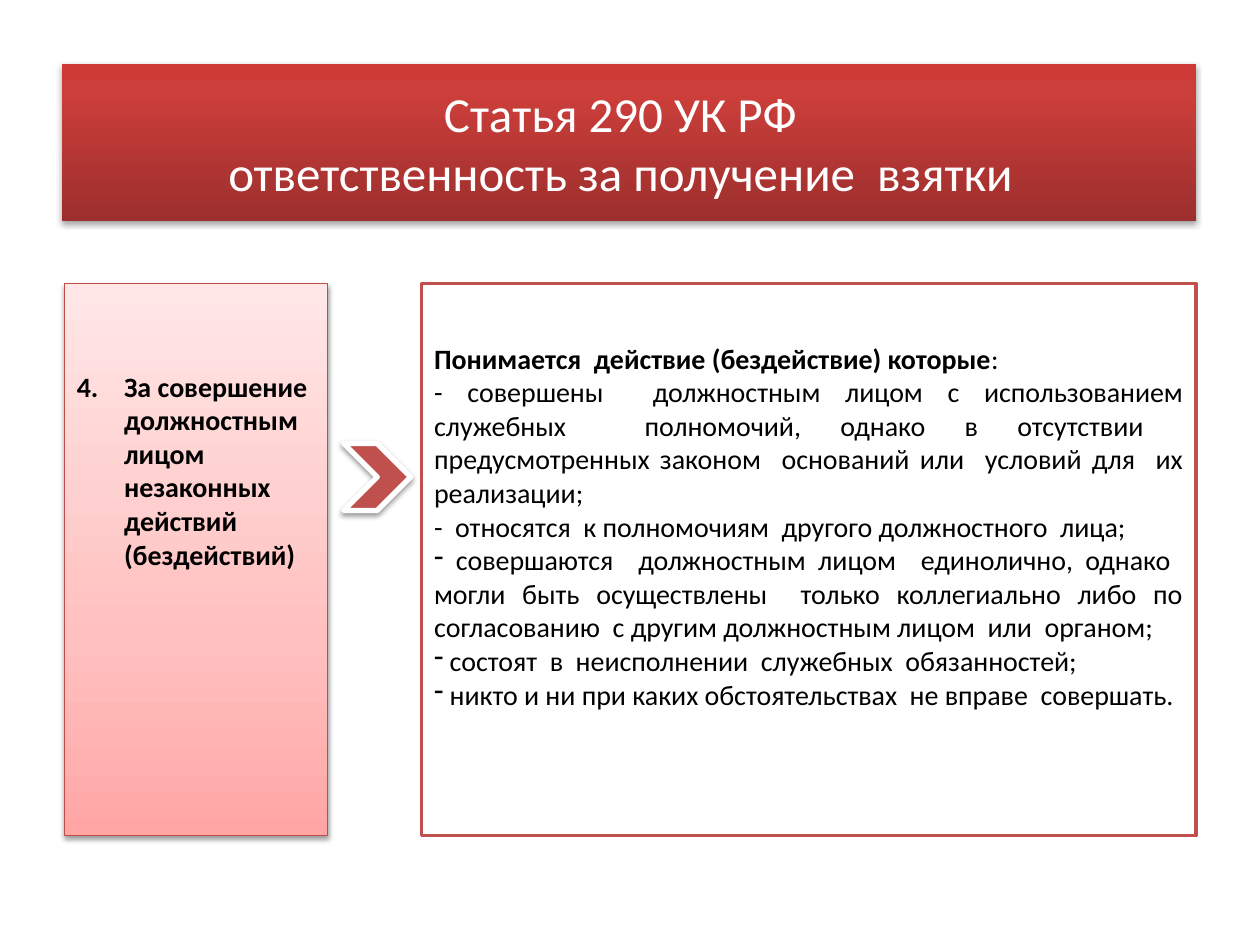
from dataclasses import dataclass
from typing import Optional

from lxml.etree import SubElement
from pptx import Presentation
from pptx.dml.color import RGBColor
from pptx.enum.shapes import MSO_SHAPE as Shape
from pptx.enum.text import MSO_ANCHOR as Anchor, PP_ALIGN as Align
from pptx.oxml.ns import qn
from pptx.util import Pt

FONT = "Calibri"
COLORS = {
    "accent": "C0504D",
    "panel_line": "BF4C48",
    "white": "FFFFFF",
    "black": "000000",
}
HEADER_STOPS = ((0, "9C2F2D"), (80, "CB3E3A"), (100, "CE3B37"))
PANEL_STOPS = ((0, "FFA6A5"), (35, "FFC0BF"), (100, "FFE7E7"))
TOP, HEIGHT = 162, 315.5


@dataclass(frozen=True)
class Block:
    kind: Shape
    left: float
    top: float
    width: float
    height: float
    fill: Optional[str] = None
    stops: tuple = ()
    line: Optional[str] = None
    line_width: float = 0
    shadow_dist: float = 0
    shadow_alpha: int = 38


@dataclass(frozen=True)
class Item:
    text: str
    bullet: bool = False


HEADER = Block(Shape.RECTANGLE, 35.5, 36.5, 648, 90, stops=HEADER_STOPS,
               shadow_dist=1.8, shadow_alpha=35)
CRIME = Block(Shape.RECTANGLE, 36.8, TOP, 150.5, HEIGHT, stops=PANEL_STOPS,
              line="panel_line", line_width=0.75, shadow_dist=1.6)
MEANING = Block(Shape.RECTANGLE, 241, TOP, 442.5, HEIGHT, fill="white",
                line="accent", line_width=2)
ARROW = Block(Shape.CHEVRON, 196.5, 253.5, 38.2, 38.2, fill="accent",
              line="white", line_width=3, shadow_dist=1.6)

TITLE = "Статья 290 УК РФ\vответственность за получение  взятки"
CRIME_TEXT = "4.\tЗа совершение должностным лицом  незаконных действий (бездействий)"
MEANING_LEAD = "Понимается  действие (бездействие) которые"
MEANING_ITEMS = (
    Item("- совершены  должностным лицом с использованием служебных  полномочий, "
         "однако в отсутствии  предусмотренных законом  оснований или  условий "
         "для  их реализации;"),
    Item("-  относятся  к полномочиям  другого должностного  лица;"),
    Item(" совершаются  должностным лицом  единолично, однако  могли  быть  "
         "осуществлены    только  коллегиально  либо  по согласованию  с другим "
         "должностным лицом  или  органом;", bullet=True),
    Item(" состоят  в  неисполнении  служебных  обязанностей;", bullet=True),
    Item(" никто и ни при каких обстоятельствах  не вправе  совершать.", bullet=True),
)


def rgb(name: str) -> RGBColor:
    return RGBColor.from_string(COLORS[name])


def set_gradient(sp, stops: tuple) -> None:
    """Fill with a bottom-to-top gradient of any number of stops."""
    sp.fill.gradient()
    sp.fill.gradient_angle = 90
    gs_list = sp._element.spPr.find(qn("a:gradFill")).find(qn("a:gsLst"))
    for gs in list(gs_list):
        gs_list.remove(gs)
    for position, color in stops:
        gs = SubElement(gs_list, qn("a:gs"), pos=str(position * 1000))
        SubElement(gs, qn("a:srgbClr"), val=color)


def add_shadow(sp, dist: float, alpha: int) -> None:
    effects = sp._element.spPr.find(qn("a:effectLst"))
    shadow = SubElement(effects, qn("a:outerShdw"), blurRad=str(Pt(3.1)),
                        dist=str(Pt(dist)), dir="5400000", rotWithShape="0")
    color = SubElement(shadow, qn("a:srgbClr"), val=COLORS["black"])
    SubElement(color, qn("a:alpha"), val=str(alpha * 1000))


def add_block(slide, block: Block):
    sp = slide.shapes.add_shape(block.kind, Pt(block.left), Pt(block.top),
                                Pt(block.width), Pt(block.height))
    if block.stops:
        set_gradient(sp, block.stops)
    else:
        sp.fill.solid()
        sp.fill.fore_color.rgb = rgb(block.fill)
    if block.line:
        sp.line.color.rgb = rgb(block.line)
        sp.line.width = Pt(block.line_width)
    else:
        sp.line.fill.background()
    sp.shadow.inherit = False
    if block.shadow_dist:
        add_shadow(sp, block.shadow_dist, block.shadow_alpha)
    return sp


def prepare_frame(sp, anchor: Anchor, top: float = 3.6, right: float = 7.2):
    tf = sp.text_frame
    tf.word_wrap = True
    tf.vertical_anchor = anchor
    tf.margin_top, tf.margin_right = Pt(top), Pt(right)
    return tf


def style(p, size: float, color: str, align: Align, bold: bool = False) -> None:
    p.alignment = align
    p.font.name = FONT
    p.font.size = Pt(size)
    p.font.bold = bold
    p.font.color.rgb = rgb(color)


def add_header(slide) -> None:
    tf = prepare_frame(add_block(slide, HEADER), Anchor.MIDDLE, right=17)
    tf.text = TITLE
    style(tf.paragraphs[0], 28, "white", Align.CENTER)


def add_crime(slide) -> None:
    tf = prepare_frame(add_block(slide, CRIME), Anchor.TOP, top=49)
    tf.text = CRIME_TEXT
    p = tf.paragraphs[0]
    pPr = p._p.get_or_add_pPr()
    pPr.set("marL", str(Pt(27)))
    pPr.set("indent", str(Pt(-27)))
    style(p, 16, "black", Align.LEFT, bold=True)


def add_meaning(slide) -> None:
    tf = prepare_frame(add_block(slide, MEANING), Anchor.TOP, top=33)
    p = tf.paragraphs[0]
    style(p, 16, "black", Align.LEFT)
    r = p.add_run()
    r.text = MEANING_LEAD
    r.font.bold = True
    p.add_run().text = ":"
    for item in MEANING_ITEMS:
        p = tf.add_paragraph()
        p.text = item.text
        if item.bullet:
            SubElement(p._p.get_or_add_pPr(), qn("a:buChar"), char="-")
        style(p, 16, "black", Align.JUSTIFY)


def main() -> None:
    prs = Presentation()
    prs.slide_width, prs.slide_height = Pt(720), Pt(540)
    slide = prs.slides.add_slide(prs.slide_layouts[6])
    add_header(slide)
    add_crime(slide)
    add_meaning(slide)
    add_block(slide, ARROW)
    prs.save("out.pptx")


if __name__ == "__main__":
    main()
